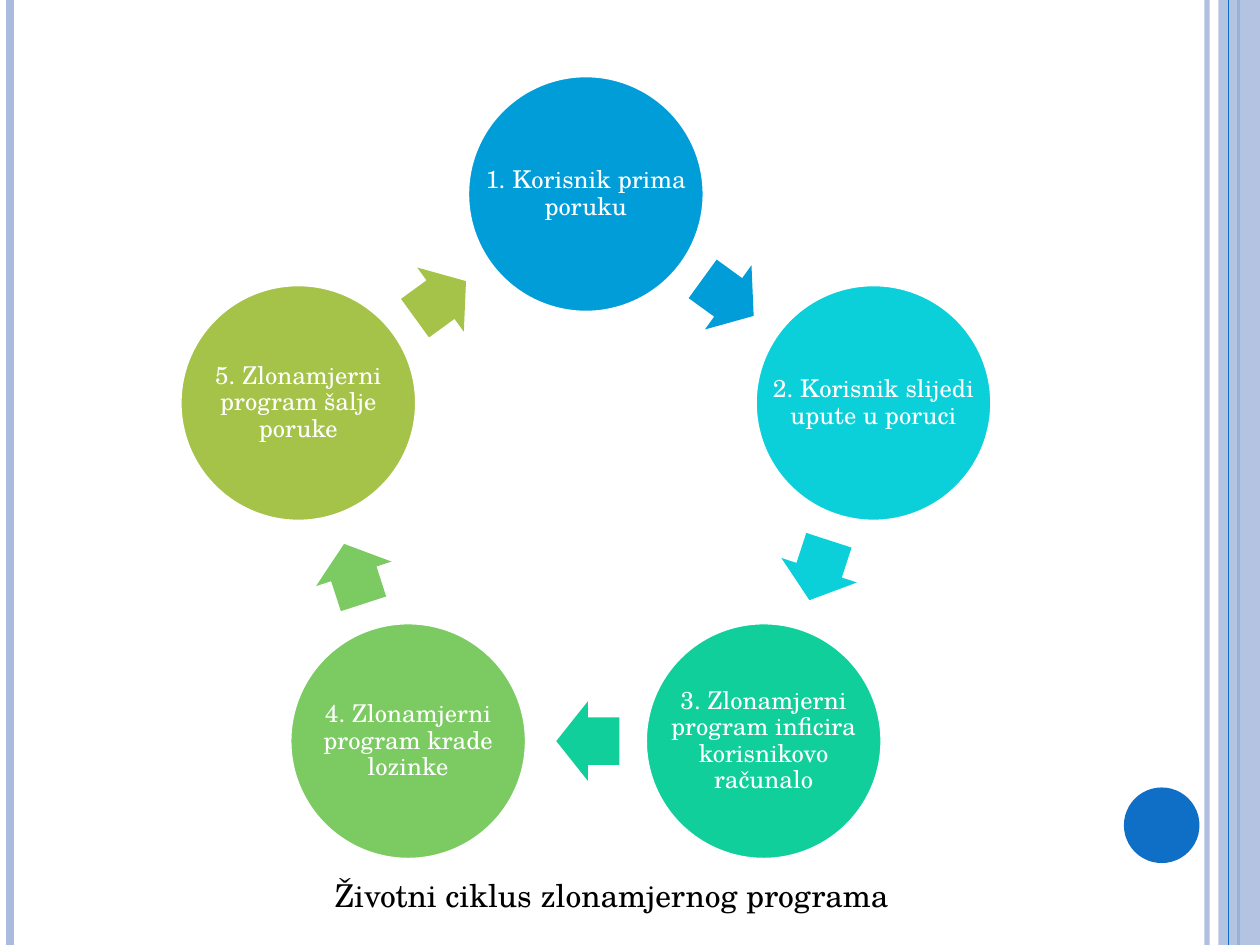
"""Build a slide showing the five-step life cycle of a malicious program."""
from dataclasses import dataclass
from math import cos, pi, radians, sin

from lxml.etree import SubElement
from pptx import Presentation
from pptx.dml.color import RGBColor
from pptx.enum.shapes import MSO_CONNECTOR, MSO_SHAPE
from pptx.enum.text import MSO_ANCHOR, PP_ALIGN
from pptx.oxml.ns import qn
from pptx.util import Inches, Pt

FONT = "TeX Gyre Schola"
WHITE = RGBColor(0xFF, 0xFF, 0xFF)
BLACK = RGBColor(0x00, 0x00, 0x00)
BLUE = RGBColor(0x0F, 0x6F, 0xC6)
PALE_BLUE = RGBColor(0xAB, 0xBB, 0xDF)

SLIDE_WIDTH, SLIDE_HEIGHT = 10, 7.5
CENTER_X, CENTER_Y, RING_RADIUS = 4.65, 3.94, 2.4
CIRCLE_SIZE = 1.88
ARROW_WIDTH, ARROW_HEIGHT, ARROW_SETBACK = 0.5, 0.63, 0.015


@dataclass(frozen=True)
class Step:
    text: str
    color: RGBColor


@dataclass(frozen=True)
class Rule:
    x: float
    color: RGBColor
    width: float
    opacity: int = 100


STEPS = [
    Step("1. Korisnik prima poruku", RGBColor(0x00, 0x9D, 0xD9)),
    Step("2. Korisnik slijedi upute u poruci", RGBColor(0x0B, 0xD0, 0xD9)),
    Step("3. Zlonamjerni program inficira korisnikovo računalo", RGBColor(0x10, 0xCF, 0x9B)),
    Step("4. Zlonamjerni program krade lozinke", RGBColor(0x7C, 0xCA, 0x62)),
    Step("5. Zlonamjerni program šalje poruke", RGBColor(0xA5, 0xC2, 0x49)),
]
RULES_BEHIND_BAND = [
    Rule(9.58, PALE_BLUE, 3, 93),
    Rule(0.08, PALE_BLUE, 4.5),
    Rule(9.83, BLUE, 1.5),
]
RULE_OVER_BAND = Rule(9.75, BLUE, 0.75)


def set_opacity(element, percent: int) -> None:
    """Make the solid colour inside an element partly transparent."""
    color = next(element.iter(qn("a:srgbClr")))
    SubElement(color, qn("a:alpha")).set("val", str(percent * 1000))


def add_rule(slide, rule: Rule) -> None:
    """Draw a vertical line over the full slide height."""
    connector = slide.shapes.add_connector(
        MSO_CONNECTOR.STRAIGHT, Inches(rule.x), Inches(0), Inches(rule.x), Inches(SLIDE_HEIGHT)
    )
    connector.line.color.rgb = rule.color
    connector.line.width = Pt(rule.width)
    if rule.opacity < 100:
        set_opacity(connector.line._get_or_add_ln(), rule.opacity)
    SubElement(connector._element.spPr, qn("a:effectLst"))


def add_filled_shape(slide, kind: MSO_SHAPE, left: float, top: float,
                     width: float, height: float, color: RGBColor):
    """Add a plain filled shape without outline or shadow."""
    shape = slide.shapes.add_shape(kind, Inches(left), Inches(top), Inches(width), Inches(height))
    shape.shadow.inherit = False
    shape.fill.solid()
    shape.fill.fore_color.rgb = color
    shape.line.fill.background()
    return shape


def add_text(slide, text: str, left: float, top: float, width: float, height: float,
             size: int, color: RGBColor):
    """Add a wrapping text box holding one run."""
    box = slide.shapes.add_textbox(Inches(left), Inches(top), Inches(width), Inches(height))
    box.text_frame.word_wrap = True
    run = box.text_frame.paragraphs[0].add_run()
    run.text = text
    run.font.name = FONT
    run.font.size = Pt(size)
    run.font.color.rgb = color
    return box.text_frame


def ring_point(turn: float, radius: float) -> tuple[float, float]:
    """Return the point at a clockwise angle from the top of the ring."""
    return CENTER_X + radius * sin(turn), CENTER_Y - radius * cos(turn)


def add_step(slide, step: Step, turn: float) -> None:
    """Draw a step circle with its centred label."""
    x, y = ring_point(turn, RING_RADIUS)
    left, top = x - CIRCLE_SIZE / 2, y - CIRCLE_SIZE / 2
    circle = add_filled_shape(slide, MSO_SHAPE.OVAL, left, top, CIRCLE_SIZE, CIRCLE_SIZE, step.color)
    circle.line.color.rgb = WHITE
    circle.line.width = Pt(2)
    frame = add_text(slide, step.text, left, top, CIRCLE_SIZE, CIRCLE_SIZE, 14, WHITE)
    frame.vertical_anchor = MSO_ANCHOR.MIDDLE
    frame.margin_left = frame.margin_right = Inches(0.02)
    frame.margin_top = frame.margin_bottom = Inches(0.02)
    frame.paragraphs[0].alignment = PP_ALIGN.CENTER
    frame.paragraphs[0].line_spacing = 0.9


def add_step_arrow(slide, color: RGBColor, degrees: float) -> None:
    """Draw an arrow midway between two neighbouring circles."""
    turn = radians(degrees)
    x, y = ring_point(turn, RING_RADIUS * cos(pi / len(STEPS)))
    left = x - ARROW_SETBACK * cos(turn) - ARROW_WIDTH / 2
    top = y - ARROW_SETBACK * sin(turn) - ARROW_HEIGHT / 2
    arrow = add_filled_shape(slide, MSO_SHAPE.RIGHT_ARROW, left, top, ARROW_WIDTH, ARROW_HEIGHT, color)
    arrow.adjustments[0] = 0.6
    arrow.adjustments[1] = 0.5
    arrow.rotation = degrees


def add_frame(slide) -> None:
    """Draw the decorative rules, side band and dot."""
    for rule in RULES_BEHIND_BAND:
        add_rule(slide, rule)
    band = add_filled_shape(slide, MSO_SHAPE.RECTANGLE, 9.67, 0, 0.33, SLIDE_HEIGHT, PALE_BLUE)
    set_opacity(band._element.spPr, 87)
    add_rule(slide, RULE_OVER_BAND)
    add_filled_shape(slide, MSO_SHAPE.OVAL, 8.92, 6.25, 0.6, 0.6, BLUE)


def main() -> None:
    """Build and save the presentation."""
    presentation = Presentation()
    presentation.slide_width = Inches(SLIDE_WIDTH)
    presentation.slide_height = Inches(SLIDE_HEIGHT)
    slide = presentation.slides.add_slide(presentation.slide_layouts[6])
    add_frame(slide)
    step_angle = 360 / len(STEPS)
    for index, step in enumerate(STEPS):
        add_step(slide, step, radians(index * step_angle))
        add_step_arrow(slide, step.color, (index + 0.5) * step_angle)
    add_text(slide, "Životni ciklus zlonamjernog programa", 2.56, 6.9, 5.75, 0.4, 18, BLACK)
    presentation.save("out.pptx")


if __name__ == "__main__":
    main()
